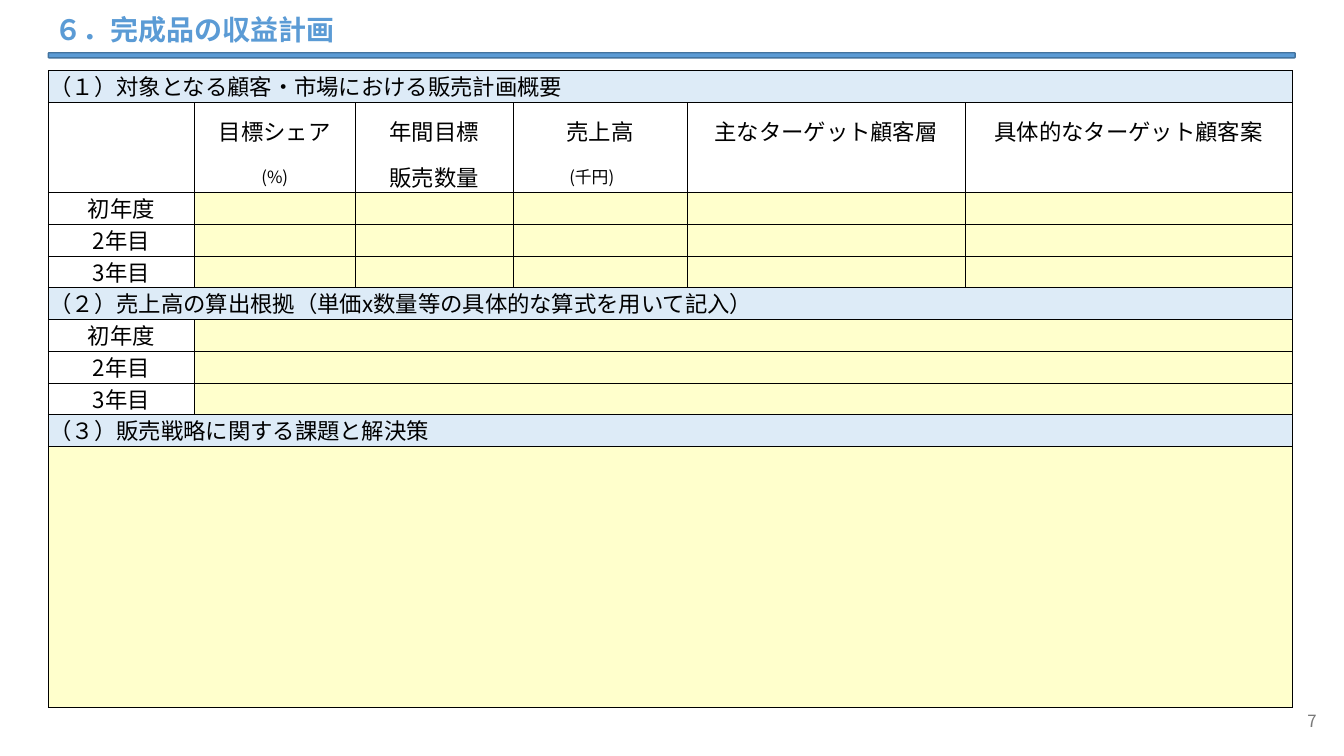
from itertools import accumulate

from lxml.etree import SubElement
from pptx import Presentation
from pptx.dml.color import RGBColor
from pptx.enum.shapes import MSO_SHAPE
from pptx.enum.text import MSO_ANCHOR, PP_ALIGN
from pptx.oxml.ns import qn
from pptx.util import Cm, Pt

FONT = "Noto Sans CJK JP"
COLORS = {
    "title": "5B9BD5", "rule_line": "43739E", "heading": "DDEBF7",
    "entry": "FFFFCC", "blank": "FFFFFF", "text": "000000", "page": "797979",
}
COLUMN_WIDTHS = [3.68, 4.05, 3.98, 4.39, 7, 8.25]
ROW_HEIGHTS = [0.8, 1.47] + [0.8] * 9 + [6.57]
LAST_COLUMN, LAST_ROW = len(COLUMN_WIDTHS) - 1, len(ROW_HEIGHTS) - 1
YEARS = ["初年度", "2年目", "3年目"]
HEADINGS = {
    0: "（１）対象となる顧客・市場における販売計画概要",
    6: "（２）売上高の算出根拠（単価x数量等の具体的な算式を用いて記入）",
    10: "（３）販売戦略に関する課題と解決策",
}
COLUMN_TITLES = ["目標シェア", "年間目標", "売上高", "主なターゲット顧客層", "具体的なターゲット顧客案"]
COLUMN_UNITS = [("(%)", 12), ("販売数量", 16), ("(千円)　", 12)]
SHARE_ROWS, BASIS_ROWS = range(3, 6), range(7, 10)


def color(name):
    """Return the named colour."""
    return RGBColor.from_string(COLORS[name])


def write(text_frame, text, size, color_name="text", align=PP_ALIGN.LEFT, bold=False, spacing=0.93):
    """Write one formatted paragraph into a text frame."""
    text_frame.vertical_anchor = MSO_ANCHOR.MIDDLE
    paragraph = text_frame.paragraphs[0]
    for name, value in {"alignment": align, "line_spacing": spacing}.items():
        setattr(paragraph, name, value)
    run = paragraph.add_run()
    run.text = text
    for name, value in {"size": Pt(size), "bold": bold, "name": FONT}.items():
        setattr(run.font, name, value)
    run.font.color.rgb = color(color_name)
    SubElement(run.font._element, qn("a:ea"), typeface=FONT)


def add_label(slide, box, text, size, color_name, **formats):
    """Add a text box at the given box."""
    text_frame = slide.shapes.add_textbox(*map(Cm, box)).text_frame
    text_frame.word_wrap = True
    write(text_frame, text, size, color_name, **formats)


def add_block(slide, kind, box, fill_name, line_name=None):
    """Add a filled shape, outlined only when a line colour is named."""
    shape = slide.shapes.add_shape(kind, *map(Cm, box))
    shape.shadow.inherit = False
    shape.fill.solid()
    shape.fill.fore_color.rgb = color(fill_name)
    if line_name:
        shape.line.color.rgb = color(line_name)
        shape.line.width = Pt(1)
    else:
        shape.line.fill.background()


def add_title_band(slide, left, top, width):
    """Place the slide title and the rule below it."""
    add_label(slide, (left - 0.1, top, 29.2, 1.55), "６．完成品の収益計画　", 20, "title", bold=True, spacing=0.9)
    add_block(slide, MSO_SHAPE.ROUNDED_RECTANGLE, (left, top + 1.3, width, 0.13), "title", "rule_line")


def set_borders(cell, widths):
    """Draw the cell sides with the given point widths, zero meaning no line."""
    properties = cell._tc.get_or_add_tcPr()
    for side, width in widths.items():
        line = SubElement(properties, qn(f"a:ln{side}"), w=str(Pt(width)))
        if width:
            fill = SubElement(line, qn("a:solidFill"))
            SubElement(fill, qn("a:srgbClr"), val=COLORS["text"])
        else:
            SubElement(line, qn("a:noFill"))


def merge_cells(table):
    """Merge the headings, the wide entry fields and the corner cell."""
    for row in [*HEADINGS, LAST_ROW]:
        table.cell(row, 0).merge(table.cell(row, LAST_COLUMN))
    for row in BASIS_ROWS:
        table.cell(row, 1).merge(table.cell(row, LAST_COLUMN))
    table.cell(1, 0).merge(table.cell(2, 0))


def format_cell(cell, row, column):
    """Set margins, borders and fill from the place of the cell."""
    margins = {"margin_left": 0.03, "margin_right": 0.03, "margin_top": 0.02, "margin_bottom": 0}
    for name, value in margins.items():
        setattr(cell, name, Cm(value))
    if not cell.is_spanned:
        right_edge = column + cell.span_width - 1 == LAST_COLUMN
        set_borders(cell, {
            "L": 0.5 if column else 1,
            "R": 1 if right_edge else 0.5,
            "T": 1 if row == 0 else 0 if row == 2 else 0.5,
            "B": 1 if row == LAST_ROW else 0 if row == 1 and column else 0.5,
        })
    is_entry = row == LAST_ROW or (column and row in [*SHARE_ROWS, *BASIS_ROWS])
    cell.fill.solid()
    cell.fill.fore_color.rgb = color("heading" if row in HEADINGS else "entry" if is_entry else "blank")


def fill_texts(table):
    """Write the headings, the column titles and the years."""
    for row, heading in HEADINGS.items():
        write(table.cell(row, 0).text_frame, heading, 16)
    centred = {(1, column): (title, 16) for column, title in enumerate(COLUMN_TITLES, 1)}
    centred.update({(2, column): unit for column, unit in enumerate(COLUMN_UNITS, 1)})
    for rows in (SHARE_ROWS, BASIS_ROWS):
        centred.update({(row, 0): (year, 16) for row, year in zip(rows, YEARS)})
    for (row, column), (text, size) in centred.items():
        cell = table.cell(row, column)
        write(cell.text_frame, text, size, align=PP_ALIGN.CENTER)
        cell.vertical_anchor = MSO_ANCHOR.MIDDLE
    for row in HEADINGS:
        table.cell(row, 0).vertical_anchor = MSO_ANCHOR.MIDDLE


def add_plan_table(slide, left, top):
    """Place the sales plan table."""
    size = sum(COLUMN_WIDTHS), sum(ROW_HEIGHTS)
    frame = slide.shapes.add_table(len(ROW_HEIGHTS), len(COLUMN_WIDTHS), *map(Cm, (left, top, *size)))
    table = frame.table
    for name in ("first_row", "horz_banding"):
        setattr(table, name, False)
    for column, width in zip(table.columns, COLUMN_WIDTHS):
        column.width = Cm(width)
    for row, height in zip(table.rows, ROW_HEIGHTS):
        row.height = Cm(height)
    merge_cells(table)
    fill_texts(table)
    for row in range(len(ROW_HEIGHTS)):
        for column in range(len(COLUMN_WIDTHS)):
            cell = table.cell(row, column)
            format_cell(cell, row, column)
            paragraph = cell.text_frame.paragraphs[0]
            if not paragraph.runs:
                SubElement(paragraph._p, qn("a:endParaRPr"), sz="1200")


def add_entry_fields(slide, left, top, inset=0.08):
    """Lay an entry field inside every cell to be filled in."""
    column_edges = list(accumulate(COLUMN_WIDTHS, initial=left))
    row_edges = list(accumulate(ROW_HEIGHTS, initial=top))
    fields = [(row, column, column) for row in SHARE_ROWS for column in range(1, LAST_COLUMN + 1)]
    fields += [(row, 1, LAST_COLUMN) for row in BASIS_ROWS]
    fields.append((LAST_ROW, 0, LAST_COLUMN))
    for row, first, last in fields:
        width = column_edges[last + 1] - column_edges[first] - 2 * inset
        height = ROW_HEIGHTS[row] - 2 * inset
        box = (column_edges[first] + inset, row_edges[row] + inset, width, height)
        add_block(slide, MSO_SHAPE.RECTANGLE, box, "entry")


def main():
    """Build and save the revenue plan slide."""
    presentation = Presentation()
    for name, value in {"slide_width": 33.87, "slide_height": 19.05}.items():
        setattr(presentation, name, Cm(value))
    slide = presentation.slides.add_slide(presentation.slide_layouts[6])
    add_title_band(slide, 1.22, 0.03, 31.42)
    add_plan_table(slide, 1.22, 1.78)
    add_label(slide, (25.81, 17.65, 7.62, 1.02), "7", 12, "page", align=PP_ALIGN.RIGHT, spacing=1.0)
    add_entry_fields(slide, 1.22, 1.78)
    presentation.save("out.pptx")


if __name__ == "__main__":
    main()
